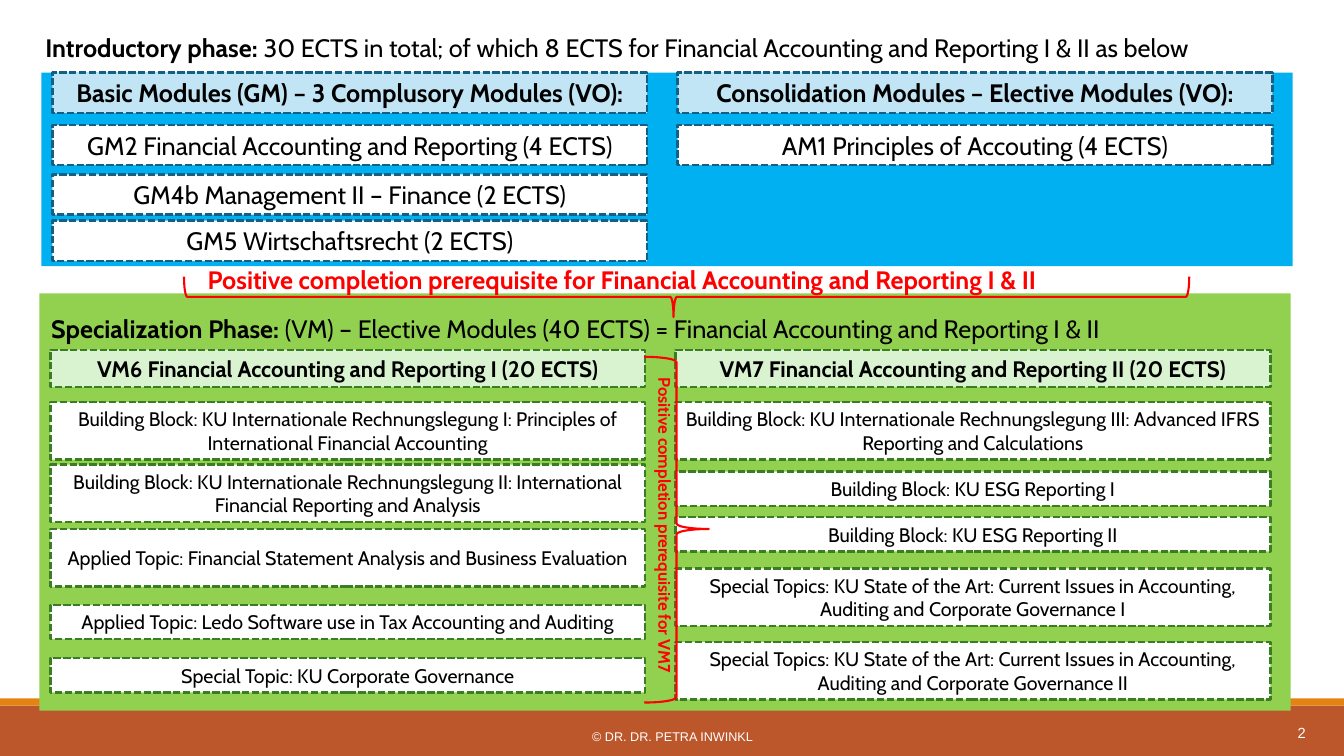
from pptx import Presentation
from pptx.dml.color import RGBColor as Rgb
from pptx.enum.dml import MSO_LINE as Dash
from pptx.enum.shapes import MSO_SHAPE as Kind
from pptx.enum.text import MSO_ANCHOR as Anchor, PP_ALIGN as Align
from pptx.util import Pt

PX = 9144
WIDE, HIGH = 1333, 750
COLS = (11, 631)
CARD = 590
RED, WHITE, BLACK = "FF0000", "FFFFFF", "000000"


def px(*nums):
    return [n * PX for n in nums]


def hue(code):
    return Rgb.from_string(code)


def write(shape, *runs, size=18, color=BLACK, font="Cabin",
          align=Align.LEFT, anchor=Anchor.TOP, pad=(10, 5)):
    frame = shape.text_frame
    frame.word_wrap = True
    frame.vertical_anchor = anchor
    frame.margin_left = frame.margin_right = pad[0] * PX
    frame.margin_top = frame.margin_bottom = pad[1] * PX
    para = frame.paragraphs[0]
    para.alignment = align
    for text, bold in runs:
        run = para.add_run()
        run.text = text
        run.font.size = Pt(size)
        run.font.name = font
        run.font.bold = bold
        run.font.color.rgb = hue(color)


def label(slide, box, *runs, turn=0, **style):
    shape = slide.shapes.add_textbox(*px(*box))
    shape.rotation = turn
    write(shape, *runs, **style)


def block(slide, box, fill, edge=None):
    shape = slide.shapes.add_shape(Kind.RECTANGLE, *px(*box))
    shape.shadow.inherit = False
    shape.fill.solid()
    shape.fill.fore_color.rgb = hue(fill)
    if edge:
        shape.line.color.rgb = hue(edge)
        shape.line.width = Pt(1.75)
        shape.line.dash_style = Dash.SQUARE_DOT
    else:
        shape.line.fill.background()
    return shape


def brace(slide, kind, box, mid, turn=0):
    shape = slide.shapes.add_shape(kind, *px(*box))
    shape.shadow.inherit = False
    shape.fill.background()
    shape.line.color.rgb = hue(RED)
    shape.line.width = Pt(1.5)
    shape.adjustments[0] = 0.083
    shape.adjustments[1] = mid
    shape.rotation = turn


def phase(slide, box, fill, tint, edge, sizes, cols):
    left, top, _, _ = box
    block(slide, box, fill)
    for dx, rows in zip(COLS, cols):
        for i, (dy, tall, text) in enumerate(rows):
            head = i == 0
            card = block(slide, (left + dx, top + dy, CARD, tall),
                         tint if head else WHITE, edge)
            write(card, (text, head), size=sizes[0 if head else 1],
                  align=Align.CENTER, anchor=Anchor.MIDDLE)


def footer(slide, box):
    left, top, wide, tall = box
    block(slide, (left, top + 7, wide, tall - 7), "BC572C")
    block(slide, (left, top, wide, 7), "E38312")
    style = dict(color=WHITE, font="Arial", anchor=Anchor.MIDDLE, pad=(0, 0))
    label(slide, (left + 442, top + 30, 450, 15),
          ("© DR. DR. PETRA INWINKL", False),
          size=9, align=Align.CENTER, **style)
    label(slide, (left + 995, top + 14, 300, 40), ("2", False),
          size=10.5, align=Align.RIGHT, **style)


def title(slide, box):
    shape = slide.shapes.title
    shape.left, shape.top, shape.width, shape.height = px(*box)
    write(shape, ("Introductory phase: ", True),
          ("30 ECTS in total; of which 8 ECTS for Financial Accounting "
           "and Reporting I & II as below", False))


def intro(slide, box):
    phase(slide, box, "00B0F0", "C1E5F5", "156082", (18, 18), (
        ((0, 40, "Basic Modules (GM) – 3 Complusory Modules (VO):"),
         (52, 40, "GM2 Financial Accounting and Reporting (4 ECTS)"),
         (101, 40, "GM4b Management II – Finance (2 ECTS)"),
         (147, 40, "GM5 Wirtschaftsrecht (2 ECTS)")),
        ((0, 40, "Consolidation Modules – Elective Modules (VO):"),
         (52, 40, "AM1 Principles of Accouting (4 ECTS)"))))


def special(slide, box):
    left, top, _, _ = box
    phase(slide, box, "92D050", "D9F2D0", "3B7D23", (16, 14), (
        ((56, 37, "VM6 Financial Accounting and Reporting I (20 ECTS)"),
         (108, 57, "Building Block: KU Internationale Rechnungslegung I: "
          "Principles of International Financial Accounting"),
         (170, 57, "Building Block: KU Internationale Rechnungslegung II: "
          "International Financial Reporting and Analysis"),
         (234, 57, "Applied Topic: Financial Statement Analysis and "
          "Business Evaluation"),
         (309, 34, "Applied Topic: Ledo Software use in Tax Accounting "
          "and Auditing"),
         (362, 34, "Special Topic: KU Corporate Governance")),
        ((56, 37, "VM7 Financial Accounting and Reporting II (20 ECTS)"),
         (108, 57, "Building Block: KU Internationale Rechnungslegung III: "
          "Advanced IFRS Reporting and Calculations"),
         (177, 34, "Building Block: KU ESG Reporting I"),
         (222, 34, "Building Block: KU ESG Reporting II"),
         (273, 57, "Special Topics: KU State of the Art: Current Issues in "
          "Accounting, Auditing and Corporate Governance I"),
         (346, 57, "Special Topics: KU State of the Art: Current Issues in "
          "Accounting, Auditing and Corporate Governance II"))))
    label(slide, (left + 2, top + 15, 1206, 40),
          ("Specialization Phase:", True),
          (" (VM) – Elective Modules (40 ECTS) = Financial Accounting "
           "and Reporting I & II", False))
    brace(slide, Kind.LEFT_BRACE, (left + 622, top - 495, 40, 997), 0.487, 270)
    label(slide, (left + 157, top - 34, 1009, 40),
          ("Positive completion prerequisite for Financial Accounting "
           "and Reporting I & II", True), color=RED)
    brace(slide, Kind.RIGHT_BRACE, (left + 600, top + 63, 64, 343), 0.498)
    label(slide, (left + 424, top + 255, 393, 30),
          ("Positive completion prerequisite for VM7", True),
          size=12, color=RED, turn=90)


def main():
    deck = Presentation()
    deck.slide_width, deck.slide_height = px(WIDE, HIGH)
    slide = deck.slides.add_slide(deck.slide_layouts.get_by_name("Title Only"))
    footer(slide, (0, 693, WIDE, 57))
    title(slide, (35, 27, 1263, 40))
    intro(slide, (41, 72, 1241, 192))
    special(slide, (39, 291, 1241, 414))
    deck.save("out.pptx")


if __name__ == "__main__":
    main()
